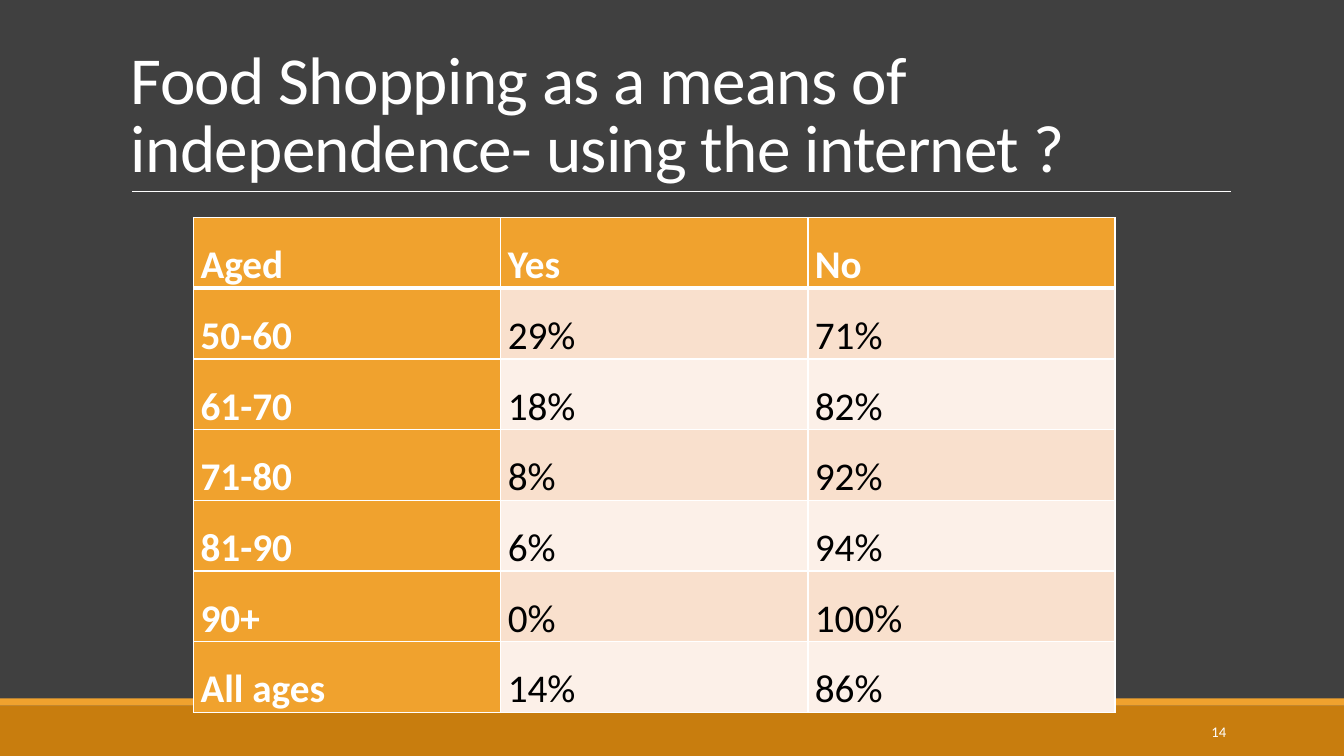
import pptx
import pptx.dml.color
import pptx.enum.shapes
import pptx.enum.text
import pptx.oxml
import pptx.oxml.ns
import pptx.util

Inches, Pt = pptx.util.Inches, pptx.util.Pt
ANCHOR, ALIGN = pptx.enum.text.MSO_ANCHOR, pptx.enum.text.PP_ALIGN
FONT = "Calibri"
COLORS = {"back": "404040", "footer": "C87D0E", "accent": "F0A22E", "white": "FFFFFF",
          "black": "000000", "band_dark": "F9E0CD", "band_light": "FCF0E8"}
ROWS = [("Aged", "Yes", "No"),
        ("50-60", "29%", "71%"),
        ("61-70", "18%", "82%"),
        ("71-80", "8%", "92%"),
        ("81-90", "6%", "94%"),
        ("90+", "0%", "100%"),
        ("All ages", "14%", "86%")]


def rgb(name):
    return pptx.dml.color.RGBColor.from_string(COLORS[name])


def paint(fill, color):
    fill.solid()
    fill.fore_color.rgb = rgb(color)


def write(tf, text, size, color="white", bold=False, spacing=None, align=None):
    """Fill a text frame with one formatted paragraph and return its run."""
    tf.text = text
    p = tf.paragraphs[0]
    p.line_spacing = spacing
    p.alignment = align
    r = p.runs[0]
    r.font.name = FONT
    r.font.size = Pt(size)
    r.font.bold = bold
    r.font.color.rgb = rgb(color)
    return r


def add_text(s, box, anchor, *args, **kwargs):
    tf = s.shapes.add_textbox(*map(Inches, box)).text_frame
    tf.word_wrap = True
    tf.vertical_anchor = anchor
    return write(tf, *args, **kwargs)


def add_bar(s, box, color):
    bar = s.shapes.add_shape(pptx.enum.shapes.MSO_SHAPE.RECTANGLE, *map(Inches, box))
    bar.shadow.inherit = False
    paint(bar.fill, color)
    bar.line.fill.background()


def add_footer(s, left, top, width, height):
    stripe = 0.07
    add_bar(s, (left, top + stripe, width, height - stripe), "footer")
    add_bar(s, (left, top, width, stripe), "accent")
    add_text(s, (left + width - 2.5, top + 0.13, 1.43, 0.4), ANCHOR.MIDDLE,
             "14", 10.5, align=ALIGN.RIGHT)


def add_title(s, left, top, width, height):
    r = add_text(s, (left, top, width, height), ANCHOR.BOTTOM,
                 "Food Shopping as a means of independence- using the internet ?",
                 48, spacing=0.85)
    r.font._element.set("spc", "-50")
    x, y = left + 0.11, top + height
    rule = s.shapes.add_connector(pptx.enum.shapes.MSO_CONNECTOR.STRAIGHT,
                                  Inches(x), Inches(y), Inches(x + 10.9), Inches(y))
    rule.line.color.rgb = rgb("white")
    rule.line.width = Pt(0.5)
    rule._element.spPr.append(pptx.oxml.parse_xml(
        f'<a:effectLst {pptx.oxml.ns.nsdecls("a")}/>'))


def add_borders(cell, widths):
    """Draw white cell borders, with widths in points for each side tag."""
    tcPr = cell._tc.get_or_add_tcPr()
    for i, (side, width) in enumerate(widths.items()):
        tcPr.insert(i, pptx.oxml.parse_xml(
            f'<a:{side} {pptx.oxml.ns.nsdecls("a")} w="{Pt(width)}"><a:solidFill>'
            f'<a:srgbClr val="{COLORS["white"]}"/></a:solidFill></a:{side}>'))


def add_age_table(s, left, top, width, height):
    table = s.shapes.add_table(len(ROWS), len(ROWS[0]),
                               *map(Inches, (left, top, width, height))).table
    table.first_col = True
    for i, row in enumerate(ROWS):
        for j, text in enumerate(row):
            heading = i == 0 or j == 0
            cell = table.cell(i, j)
            cell.margin_left = cell.margin_right = Inches(0.07)
            cell.margin_top = cell.margin_bottom = 0
            paint(cell.fill, "accent" if heading else "band_dark" if i % 2 else "band_light")
            add_borders(cell, {"lnL": 1, "lnR": 1, "lnT": 3 if i == 1 else 1,
                               "lnB": 3 if i == 0 else 1})
            write(cell.text_frame, text, 28, "white" if heading else "black",
                  bold=heading, spacing=1.5)


def main():
    prs = pptx.Presentation()
    prs.slide_width, prs.slide_height = Inches(13.33), Inches(7.5)
    s = prs.slides.add_slide(prs.slide_layouts[6])
    paint(s.background.fill, "back")
    add_footer(s, 0, 6.93, 13.33, 0.57)
    add_title(s, 1.2, 0.31, 11, 1.59)
    add_age_table(s, 1.92, 2.16, 9.14, 4.9)
    prs.save("out.pptx")


if __name__ == "__main__":
    main()
